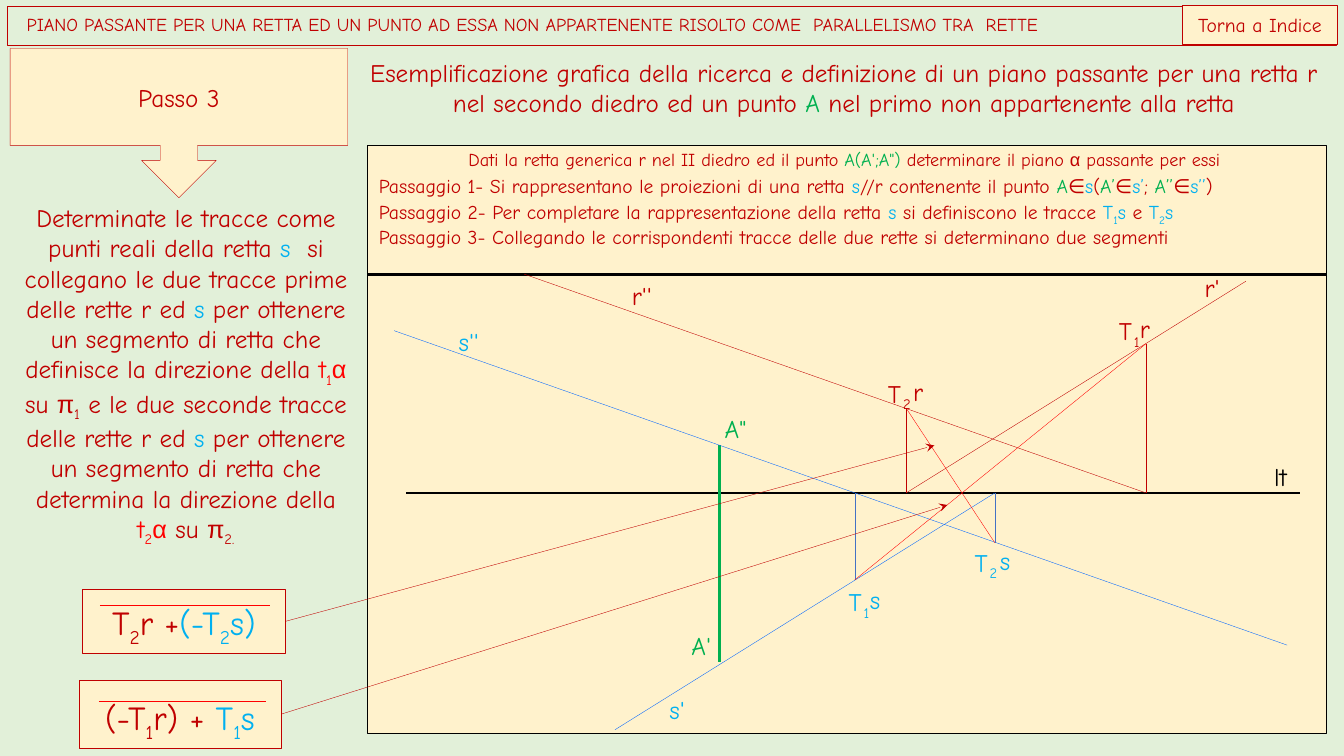
"""Builds the slide on the plane through a line and a point, step 3."""
from itertools import groupby

from lxml import etree
from pptx import Presentation
from pptx.dml.color import RGBColor
from pptx.enum.shapes import MSO_CONNECTOR, MSO_SHAPE
from pptx.enum.text import MSO_ANCHOR, MSO_AUTO_SIZE, PP_ALIGN
from pptx.oxml.ns import qn
from pptx.util import Pt

STRAIGHT = MSO_CONNECTOR.STRAIGHT
RECT, CALLOUT = MSO_SHAPE.RECTANGLE, MSO_SHAPE.DOWN_ARROW_CALLOUT
LEFT, CENTER = PP_ALIGN.LEFT, PP_ALIGN.CENTER
TOP, MIDDLE, BOTTOM = MSO_ANCHOR.TOP, MSO_ANCHOR.MIDDLE, MSO_ANCHOR.BOTTOM
GROW, FIXED = MSO_AUTO_SIZE.SHAPE_TO_FIT_TEXT, MSO_AUTO_SIZE.NONE

MINT, CREAM, BLACK = "E2F0D9", "FFF2CC", "000000"
CRIMSON, RED, GREEN = "C00000", "FF0000", "00B050"
SKY, BLUE, STEEL = "00B0F0", "0066FF", "4472C4"
RIGHT_SIDE = 3


def rgb(code):
    return RGBColor.from_string(code)


def write(frame, runs, size=18, align=CENTER, anchor=TOP, insets=(7.2, 3.6),
          wrap=True, grow=True, spacing=None):
    """Fills a frame with (text, colour) runs; underscores enclose subscripts."""
    frame.word_wrap = wrap
    frame.auto_size = GROW if grow else FIXED
    frame.vertical_anchor = anchor
    frame.margin_left = frame.margin_right = Pt(insets[0])
    frame.margin_top = frame.margin_bottom = Pt(insets[1])
    paragraph = frame.paragraphs[0]
    paragraph.alignment = align
    if spacing:
        paragraph.line_spacing = spacing
    for text, colour in runs:
        for index, part in enumerate(text.split("_")):
            for greek, letters in groupby(part, lambda letter: letter in "απ"):
                run = paragraph.add_run()
                run.text = "".join(letters)
                run.font.size = Pt(size)
                run.font.name = "Arial" if greek else "Comic Neue"
                run.font.color.rgb = rgb(colour)
                if index % 2:
                    run.font._element.set("baseline", "-25000")


class Board:
    """Holds the current slide and draws its kinds of element."""

    def __init__(self, slide, background):
        self.shapes = slide.shapes
        slide.background.fill.solid()
        slide.background.fill.fore_color.rgb = rgb(background)

    def box(self, area, runs=(), kind=RECT, fill=CREAM, line=CRIMSON, width=0.25, **style):
        shape = self.shapes.add_shape(kind, *map(Pt, area))
        shape.shadow.inherit = False
        if fill:
            shape.fill.solid()
            shape.fill.fore_color.rgb = rgb(fill)
        else:
            shape.fill.background()
        shape.line.color.rgb = rgb(line)
        shape.line.width = Pt(width)
        if runs:
            write(shape.text_frame, runs, **style)
        return shape

    def text(self, area, runs, **style):
        write(self.shapes.add_textbox(*map(Pt, area)).text_frame, runs, **style)

    def label(self, x, y, text, colour):
        self.text((x, y, 8.5 * len(text), 21.6), [(text, colour)],
                  align=LEFT, insets=(0, 0), wrap=False)

    def trace_label(self, x, y, number, name, colour):
        self.label(x, y, "T", colour)
        self.label(x + 10.8, y + 0.3, f"_{number}_", colour)
        self.label(x + (15.1 if number == 1 else 18), y - 1.4, name, colour)

    def line(self, start, end, colour=CRIMSON, width=0.25, source=None):
        connector = self.shapes.add_connector(STRAIGHT, *map(Pt, start + end))
        connector.line.color.rgb = rgb(colour)
        connector.line.width = Pt(width)
        if source:
            connector.begin_connect(source, RIGHT_SIDE)
            etree.SubElement(connector.line._get_or_add_ln(), qn("a:tailEnd"), type="stealth")
        etree.SubElement(connector._element.spPr, qn("a:effectLst"))

    def segment_box(self, area, runs, bar_start, bar_end):
        box = self.box(area, runs, size=24, anchor=BOTTOM)
        self.line(bar_start, bar_end, RED, 0.5)
        return box


def draw_frame(board):
    board.box((7.2, 34.6, 241.2, 106.6), [("Passo 3", CRIMSON)], kind=CALLOUT,
              anchor=MIDDLE, grow=False)
    board.text((248.4, 37.4, 708.5, 51.1), [
        ("Esemplificazione grafica della ricerca e definizione di un piano passante "
         "per una retta r nel secondo diedro ed un punto ", CRIMSON),
        ("A ", GREEN), ("nel primo non appartenente alla retta", CRIMSON)])
    board.box((5, 4.3, 949.7, 28.1), [
        ("PIANO PASSANTE PER UNA RETTA ED UN PUNTO AD ESSA NON APPARTENENTE RISOLTO COME  "
         "PARALLELISMO TRA  RETTE", CRIMSON)],
        fill=None, size=13, align=LEFT, anchor=MIDDLE, insets=(14, 3.6), grow=False, spacing=0.9)
    board.box((844.6, 3.6, 110.9, 28.1), [("Torna a Indice", CRIMSON)], size=14, anchor=MIDDLE)
    board.text((5, 141.1, 255.6, 269.3), [
        ("Determinate le tracce come punti reali della retta ", CRIMSON), ("s", SKY),
        ("  si collegano le due tracce prime delle rette r ed ", CRIMSON), ("s", SKY),
        (" per ottenere un segmento di retta che definisce la direzione della ", CRIMSON),
        ("t_1_α", RED), (" su π_1_ e le due seconde tracce delle rette r ed ", CRIMSON),
        ("s", SKY),
        (" per ottenere un segmento di retta che determina la direzione della ", CRIMSON),
        ("t_2_α", RED), (" su π_2._", CRIMSON)])


def draw_statement(board):
    board.text((262.8, 105.8, 684.7, 15.8), [
        ("Dati la retta generica r nel II diedro ed il punto ", CRIMSON), ("A(A';A\") ", GREEN),
        ("determinare il piano α passante per essi ", CRIMSON)], size=13, insets=(0, 0))
    steps = [
        [("Passaggio 1- Si rappresentano le proiezioni di una retta", CRIMSON), (" s", SKY),
         ("//r contenente il punto ", CRIMSON), ("A", GREEN), ("∈", CRIMSON), ("s", SKY),
         ("(", CRIMSON), ("A’", GREEN), ("∈", CRIMSON), ("s’", SKY), ("; ", CRIMSON),
         ("A’’", GREEN), ("∈", CRIMSON), ("s’’", SKY), (")", CRIMSON)],
        [("Passaggio 2- Per completare la rappresentazione della retta ", CRIMSON), ("s", SKY),
         (" si definiscono le tracce ", CRIMSON), ("T_1_s", SKY), (" e ", CRIMSON),
         ("T_2_s", SKY)],
        [("Passaggio 3- Collegando le corrispondenti tracce delle due rette si determinano "
          "due segmenti", CRIMSON)],
    ]
    for index, step in enumerate(steps):
        board.text((263.5, 121 + 18 * index, 685.4, 24.5), step, size=14, align=LEFT)


def draw_construction(board):
    ground = 352.1
    t1r, t2r = (818.6, 245.5), (647.3, 291.6)
    t1s, t2s = (610.6, 414.2), (710.6, 387.7)

    board.line((262.8, 195.8), (947.5, 195.8), BLACK, 0)
    board.line((290.2, ground), (928.8, ground), BLACK, 0)
    board.line((374.4, 195.8), (t1r[0], ground))
    board.line((t2r[0], ground), (889.9, 200.9))
    board.line((514.1, 318.2), (514.1, 473), GREEN, 0)
    board.line((439.2, 521.3), (t2s[0], ground), BLUE)
    board.line((281.5, 236.2), (919.4, 460.8), BLUE)
    for trace, colour in ((t1r, CRIMSON), (t2r, CRIMSON), (t1s, STEEL), (t2s, STEEL)):
        board.line((trace[0], ground), trace, colour)
    board.line(t1s, t1r, RED)
    board.line(t2r, t2s, RED)

    for x, y, text, colour in (
            (910.1, 329.8, "lt", BLACK), (493.9, 450, "A'", GREEN), (517.7, 295.2, "A\"", GREEN),
            (860.4, 194.4, "r'", CRIMSON), (451.4, 200.2, "r''", CRIMSON),
            (478.1, 496.1, "s'", SKY), (327.6, 233.3, "s''", SKY)):
        board.label(x, y, text, colour)
    for x, y, number, name, colour in (
            (799.2, 225.4, 1, "r", CRIMSON), (634.3, 270, 2, "r", CRIMSON),
            (606.2, 419, 1, "s", SKY), (696.2, 390.6, 2, "s", SKY)):
        board.trace_label(x, y, number, name, colour)


def main():
    deck = Presentation()
    deck.slide_width, deck.slide_height = Pt(960), Pt(540)
    board = Board(deck.slides.add_slide(deck.slide_layouts[6]), MINT)
    draw_frame(board)
    second_traces = board.segment_box(
        (59, 421.2, 144.7, 45.4), [("T_2_r +", CRIMSON), ("(-T_2_s)", SKY)],
        (71.3, 432.7), (193, 432.7))
    first_traces = board.segment_box(
        (56.2, 486, 144.7, 48.2), [("(-T_1_r) + ", CRIMSON), ("T_1_s", SKY)],
        (70.6, 501.1), (190.1, 501.1))
    board.box((262.8, 103.7, 684.7, 420.5), line=BLACK, width=0)
    draw_statement(board)
    draw_construction(board)
    board.line((203.7, 443.9), (667.4, 318.2), source=second_traces)
    board.line((200.9, 510.1), (676.8, 360.7), source=first_traces)
    deck.save("out.pptx")


if __name__ == "__main__":
    main()
